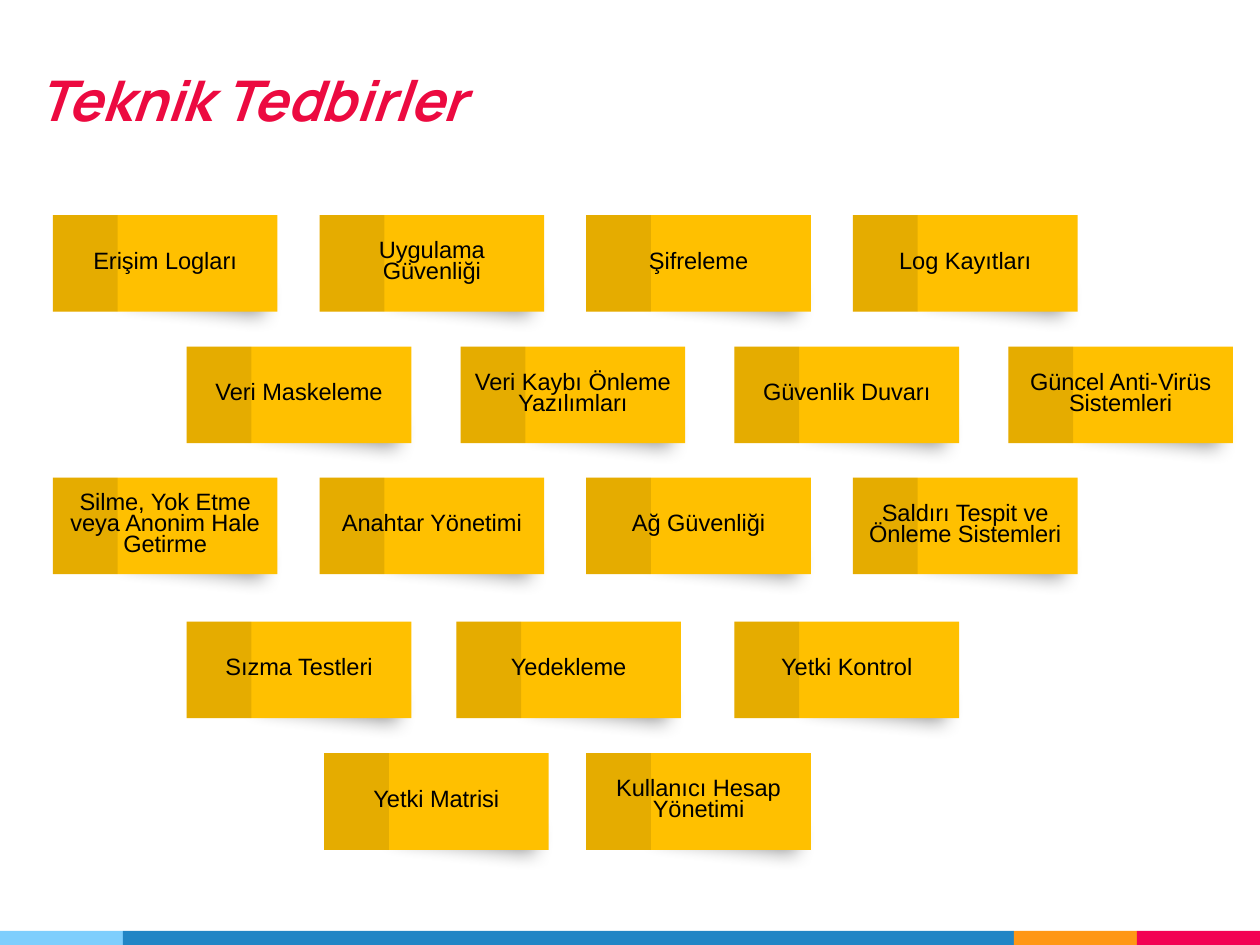
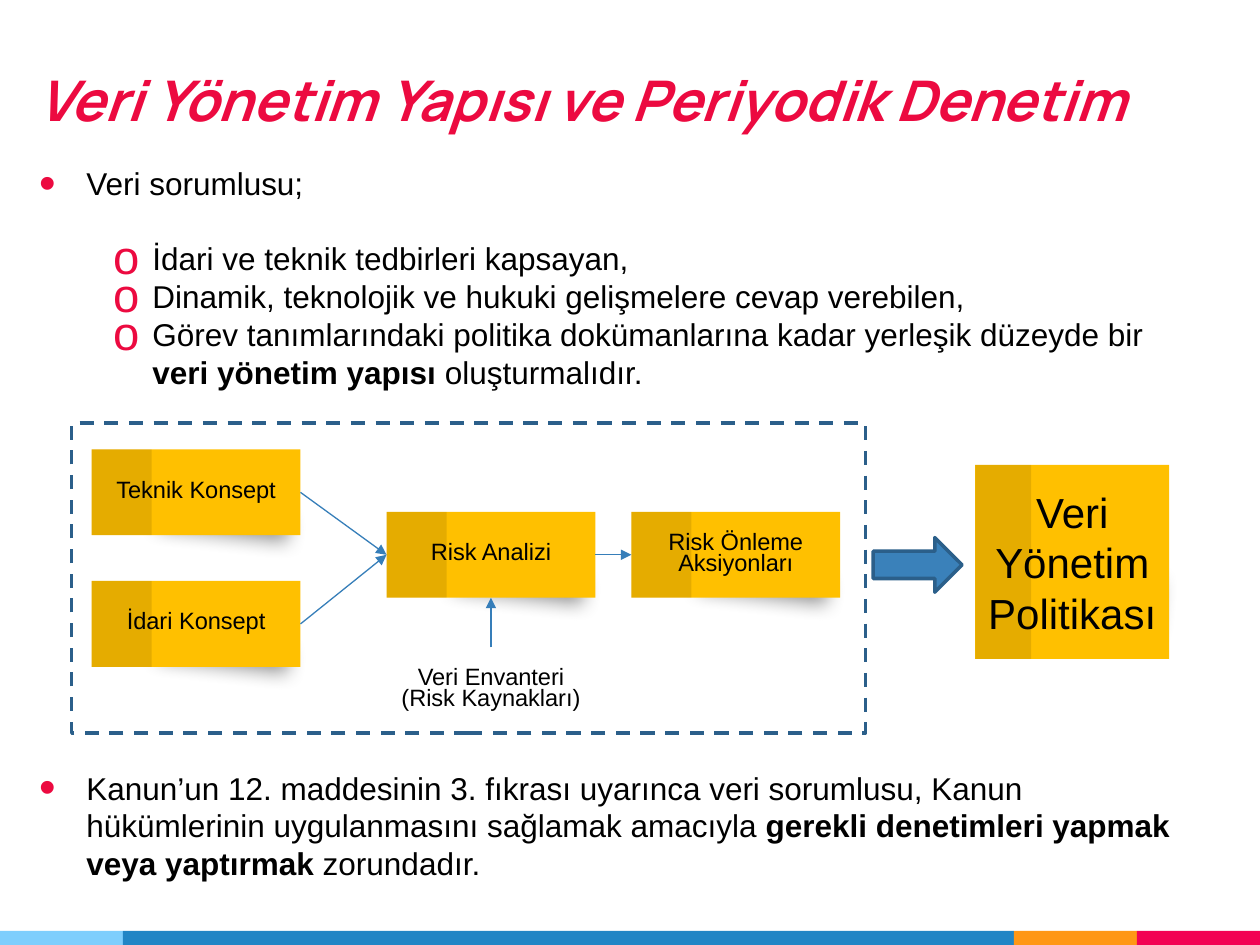
import pptx
import pptx.util
import pptx.dml.color
import pptx.enum.dml
import pptx.enum.shapes
import pptx.enum.text
import pptx.oxml
import pptx.oxml.ns
import lxml.etree
from dataclasses import dataclass

Pt = pptx.util.Pt
Kind = pptx.enum.shapes.MSO_SHAPE
Align = pptx.enum.text.PP_ALIGN
Anchor = pptx.enum.text.MSO_ANCHOR
qn = pptx.oxml.ns.qn


@dataclass(frozen=True)
class Theme:
    red: str = "EC0A40"
    gold: str = "FFC000"
    flap: str = "D89F39"
    black: str = "000000"
    white: str = "FFFFFF"
    line: str = "367EB9"
    arrow: str = "3A81BA"
    edge: str = "2B5F8A"
    bands: tuple = ("7ECEFD", "2185C5", "FF9715", "F20253")
    head: str = "Manrope"
    font: str = "Arial"
    title: float = 32
    big: float = 24
    body: float = 18
    small: float = 13.5
    tight: float = 12
    lead: float = 1.2  # line height per type size


T = Theme()


def rgb(code):
    return pptx.dml.color.RGBColor.from_string(code)


def add(parent, tag, **attrs):
    """Append a drawing element to parent."""
    node = lxml.etree.SubElement(parent, qn("a:" + tag))
    for key, value in attrs.items():
        node.set(key, str(value))
    return node


def style(run, size, color=T.black, font=T.font, bold=False, slant=False):
    run.font.size = Pt(size)
    run.font.name = font
    run.font.bold = bold
    run.font.italic = slant
    run.font.color.rgb = rgb(color)


def place(shape, left, top, width, height):
    shape.left, shape.top = Pt(left), Pt(top)
    shape.width, shape.height = Pt(width), Pt(height)


def block(shapes, box, fill=None, edge=None, kind=Kind.RECTANGLE):
    """A plain shape with optional fill and outline."""
    shape = shapes.add_shape(kind, *[Pt(v) for v in box])
    shape.shadow.inherit = False
    if fill:
        shape.fill.solid()
        shape.fill.fore_color.rgb = rgb(fill)
    else:
        shape.fill.background()
    if edge:
        shape.line.color.rgb = rgb(edge)
        shape.line.width = Pt(2)
    else:
        shape.line.fill.background()
    return shape


def label(shape, text, size=T.small, lead=T.tight):
    """Centred black text inside a shape."""
    frame = shape.text_frame
    frame.text = text
    frame.word_wrap = True
    frame.vertical_anchor = Anchor.MIDDLE
    frame.margin_left = frame.margin_right = Pt(7.2)
    frame.margin_top = frame.margin_bottom = 0
    for para in frame.paragraphs:
        para.alignment = Align.CENTER
        para.line_spacing = Pt(lead)
        for run in para.runs:
            style(run, size)


def card(slide, text, left, top, width, height, **kw):
    """Gold note: tilted flap casting the shadow, face and darker strip."""
    shapes = slide.shapes.add_group_shape().shapes
    flap = block(shapes, (left + 0.3 * width, top + 0.44 * height,
                          0.62 * width, 0.26 * height), T.flap)
    flap.rotation = 6
    glow = flap.element.spPr.find(qn("a:effectLst"))
    cast = add(glow, "outerShdw", blurRad=Pt(11), dist=Pt(15), dir=80 * 60000)
    add(add(cast, "srgbClr", val=T.black), "alpha", val=41000)

    face = block(shapes, (left, top, width, height), T.gold)
    label(face, text, **kw)

    strip = block(shapes, (left, top, 0.288 * width, height), T.black)
    tone = strip.element.spPr.find(qn("a:solidFill"))[0]
    add(tone, "alpha", val=10000)
    return face


def join(slide, start, side, end, goal):
    """Arrow from the middle of one side to the middle of another."""
    wire = slide.shapes.add_connector(
        pptx.enum.shapes.MSO_CONNECTOR.STRAIGHT, 0, 0, 0, 0)
    wire.begin_connect(start, side)
    wire.end_connect(end, goal)
    wire.line.color.rgb = rgb(T.line)
    wire.line.width = Pt(0.75)
    add(wire.line._get_or_add_ln(), "tailEnd", type="triangle")
    add(wire.element.spPr, "effectLst")


def head(slide, text):
    title = slide.shapes.title
    place(title, 14.4, 19.4, 692, 63.4)
    frame = title.text_frame
    frame.text = text
    frame.vertical_anchor = Anchor.BOTTOM
    frame.auto_size = pptx.enum.text.MSO_AUTO_SIZE.NONE
    frame.margin_top = frame.margin_bottom = Pt(7.2)
    para = frame.paragraphs[0]
    para.alignment = Align.LEFT
    style(para.runs[0], T.title, T.red, T.head, True, True)


def point(para, parts, mark, indent, hang, gap=0):
    """Bulleted paragraph; every second part is bold."""
    para.line_spacing = Pt(T.lead * T.body)
    para.space_before, para.space_after = Pt(gap), 0
    props = para._p.get_or_add_pPr()
    props.set("marL", str(Pt(indent)))
    props.set("indent", str(Pt(-hang)))
    add(add(props, "buClr"), "srgbClr", val=T.red)
    add(props, "buSzPct", val=150000)
    add(props, "buFont", typeface=T.font)
    add(props, "buChar", char=mark)
    for i, part in enumerate(parts):
        run = para.add_run()
        run.text = part
        style(run, T.body, bold=i % 2 == 1)


def bands(deck, slide):
    """Colour bands along the foot, moved to the master for all slides."""
    tree = deck.slide_master.shapes.element
    left = 0
    for i, (color, width) in enumerate(zip(T.bands, (70.3, 509.1, 70.3, 70.3))):
        band = block(slide.shapes, (left, 532, width, 8), color)
        band.element.nvSpPr.cNvPr.id = 50 + i
        tree.append(band.element)
        left += width


def steps(slide):
    """First slide: staggered rows of technical measures."""
    head(slide, "Teknik Tedbirler")
    odd = [30.2 + 152.4 * i for i in range(4)]
    even = [106.7 + 156.5 * i for i in range(4)]
    rows = (
        (122.9, odd, ("Erişim Logları", "Uygulama Güvenliği", "Şifreleme",
                      "Log Kayıtları")),
        (198, even, ("Veri Maskeleme", "Veri Kaybı Önleme Yazılımları",
                     "Güvenlik Duvarı", "Güncel Anti-Virüs Sistemleri")),
        (272.9, odd, ("Silme, Yok Etme veya Anonim Hale Getirme",
                      "Anahtar Yönetimi", "Ağ Güvenliği",
                      "Saldırı Tespit ve Önleme Sistemleri")),
        (355.2, (even[0], 260.8, even[2]),
         ("Sızma Testleri", "Yedekleme", "Yetki Kontrol")),
        (430.4, (185.2, odd[2]),
         ("Yetki Matrisi", "Kullanıcı Hesap Yönetimi")),
    )
    for top, lefts, names in rows:
        for left, name in zip(lefts, names):
            card(slide, name, left, top, 128.4, 55.2)


def duties(slide):
    """Second slide: the bulleted text around the flow."""
    body = slide.placeholders[1]
    place(body, 15.1, 86.4, 679, 434)
    frame = body.text_frame
    frame.auto_size = pptx.enum.text.MSO_AUTO_SIZE.NONE
    frame.margin_top = frame.margin_bottom = Pt(7.2)
    row = T.lead * T.body
    main_dot, sub_dot = ("•", 27, 27), ("o", 64.8, 22.3)
    items = (
        (("Veri sorumlusu;",), *main_dot),
        (("İdari ve teknik tedbirleri kapsayan,",), *sub_dot, row),
        (("Dinamik, teknolojik ve hukuki gelişmelere cevap verebilen,",),
         *sub_dot),
        (("Görev tanımlarındaki politika dokümanlarına kadar yerleşik "
          "düzeyde bir ", "veri yönetim yapısı ", "oluşturmalıdır."), *sub_dot),
        (("Kanun’un 12. maddesinin 3. fıkrası uyarınca veri sorumlusu, Kanun "
          "hükümlerinin uygulanmasını sağlamak amacıyla ",
          "gerekli denetimleri yapmak veya yaptırmak ", "zorundadır."),
         *main_dot, 10 * row),
    )
    for i, item in enumerate(items):
        para = frame.add_paragraph() if i else frame.paragraphs[0]
        point(para, *item)


def flow(slide):
    """Second slide: from concepts through risk to the policy."""
    size = (119.3, 49.1)
    tech = card(slide, "Teknik Konsept", 52.4, 256.8, *size)
    admin = card(slide, "İdari Konsept", 52.4, 332, *size)
    risk = card(slide, "Risk Analizi", 220.9, 292.5, *size)
    act = card(slide, "Risk Önleme Aksiyonları", 360.8, 292.5, *size)
    stock = block(slide.shapes, (220.9, 370, *size), T.white)
    label(stock, "Veri Envanteri\n(Risk Kaynakları)")

    # Arrows between the cards
    join(slide, stock, 0, risk, 2)
    join(slide, risk, 3, act, 1)
    join(slide, admin, 3, risk, 1)
    join(slide, tech, 3, risk, 1)

    # Dashed frame and its outcome
    frame = block(slide.shapes, (41, 241.8, 453.6, 177.2), edge=T.edge)
    frame.line.dash_style = pptx.enum.dml.MSO_LINE.DASH
    block(slide.shapes, (499, 307.2, 50.8, 31.2), T.arrow, T.edge,
          Kind.RIGHT_ARROW)
    card(slide, "Veri Yönetim Politikası", 557.3, 265.6, 110.9, 110.9,
         size=T.big, lead=T.lead * T.big)


def main():
    deck = pptx.Presentation()
    deck.slide_width, deck.slide_height = Pt(720), Pt(540)

    first = deck.slides.add_slide(deck.slide_layouts[5])
    bands(deck, first)
    steps(first)

    second = deck.slides.add_slide(deck.slide_layouts[1])
    head(second, "Veri Yönetim Yapısı ve Periyodik Denetim")
    duties(second)
    flow(second)

    deck.save("out.pptx")


if __name__ == "__main__":
    main()
